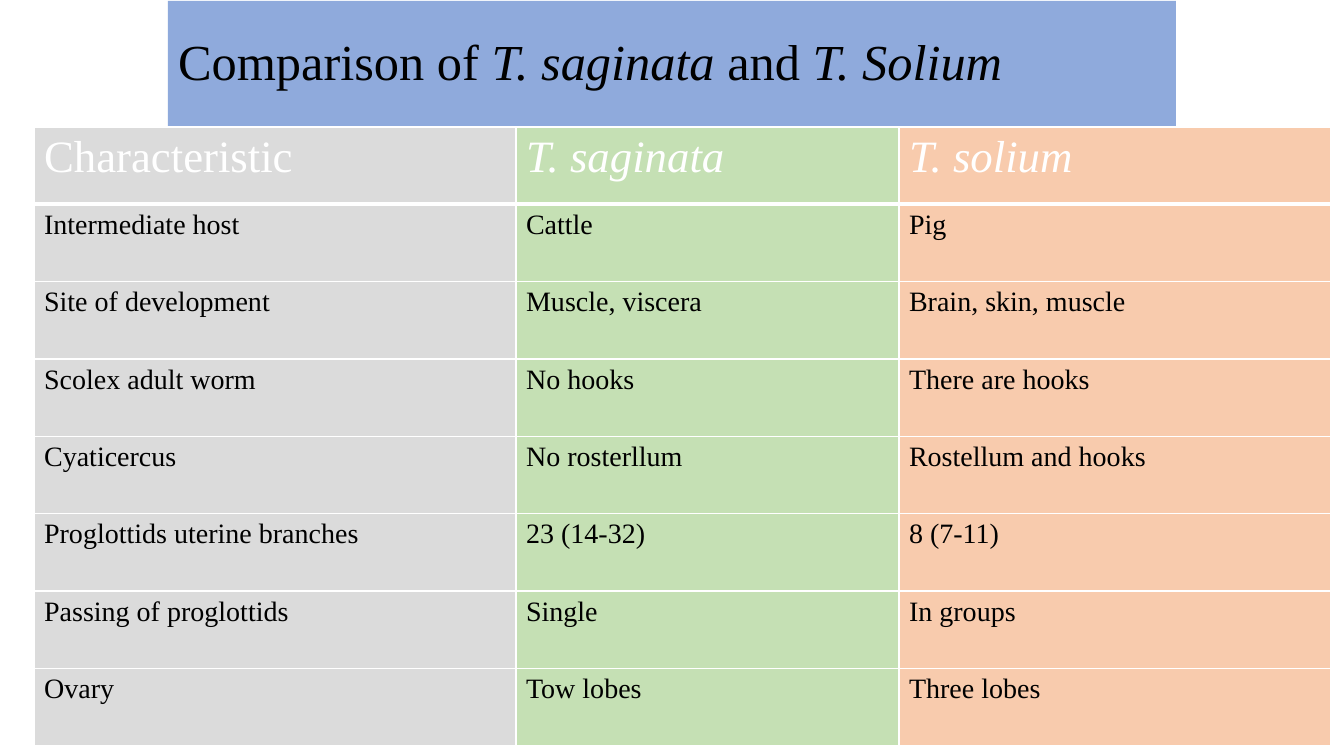
"""Build a slide that compares two tapeworm species in a table."""
import lxml.etree
import pptx
import pptx.dml.color
import pptx.enum.text
import pptx.oxml.ns
import pptx.util

PX = 914400 / 100.8
FONT = "Times New Roman"
COLOURS = {
    "title": "8FAADC",
    "characteristic": "DBDBDB",
    "saginata": "C5E0B4",
    "solium": "F8CBAD",
    "text": "000000",
    "white": "FFFFFF",
}
TITLE_RUNS = [
    ("Comparison of ", False),
    ("T. saginata ", True),
    ("and ", False),
    ("T. Solium", True),
]
COLUMNS = [("characteristic", 482), ("saginata", 383), ("solium", 432)]
ROWS = [
    ("Characteristic", "T. saginata", "T. solium"),
    ("Intermediate host", "Cattle", "Pig"),
    ("Site of development", "Muscle, viscera", "Brain, skin, muscle"),
    ("Scolex adult worm", "No hooks", "There are hooks"),
    ("Cyaticercus", "No rosterllum", "Rostellum and hooks"),
    ("Proglottids uterine branches", "23 (14-32)", "8 (7-11)"),
    ("Passing of proglottids", "Single", "In groups"),
    ("Ovary", "Tow lobes", "Three lobes"),
]
TABLE_HEIGHT = 619
HEADER_BORDERS = {"lnL": 1, "lnR": 1, "lnT": 1, "lnB": 3}


def length(pixels):
    return pptx.util.Emu(round(pixels * PX))


def format_run(run, size, colour, italic):
    run.font.name = FONT
    run.font.size = pptx.util.Pt(size)
    run.font.bold = False
    run.font.italic = italic
    run.font.color.rgb = pptx.dml.color.RGBColor.from_string(COLOURS[colour])


presentation = pptx.Presentation()
presentation.slide_width = length(1344)
presentation.slide_height = length(756)
slide = presentation.slides.add_slide(presentation.slide_layouts[5])

title = slide.shapes.title
title.left, title.top = length(168), length(1)
title.width, title.height = length(1008), length(126)
title.fill.solid()
title.fill.fore_color.rgb = pptx.dml.color.RGBColor.from_string(COLOURS["title"])
title.text_frame.vertical_anchor = pptx.enum.text.MSO_ANCHOR.MIDDLE
paragraph = title.text_frame.paragraphs[0]
paragraph.alignment = pptx.enum.text.PP_ALIGN.LEFT
paragraph.line_spacing = 0.9
for text, italic in TITLE_RUNS:
    run = paragraph.add_run()
    run.text = text
    format_run(run, 36, "text", italic)

table = slide.shapes.add_table(
    len(ROWS), len(COLUMNS), length(34), length(127),
    length(sum(width for name, width in COLUMNS)), length(TABLE_HEIGHT),
).table
for column, (name, width) in zip(table.columns, COLUMNS):
    column.width = length(width)

for row_index, texts in enumerate(ROWS):
    table.rows[row_index].height = length(TABLE_HEIGHT / len(ROWS))
    is_header = row_index == 0
    for column_index, text in enumerate(texts):
        cell = table.cell(row_index, column_index)
        cell.fill.solid()
        fill_colour = COLOURS[COLUMNS[column_index][0]]
        cell.fill.fore_color.rgb = pptx.dml.color.RGBColor.from_string(fill_colour)
        cell.text_frame.text = text
        format_run(
            cell.text_frame.paragraphs[0].runs[0],
            32 if is_header else 20,
            "white" if is_header else "text",
            is_header and column_index > 0,
        )
        if is_header:
            properties = cell._tc.get_or_add_tcPr()
            for position, (side, points) in enumerate(HEADER_BORDERS.items()):
                border = lxml.etree.Element(
                    pptx.oxml.ns.qn(f"a:{side}"), w=str(pptx.util.Pt(points))
                )
                fill = lxml.etree.SubElement(border, pptx.oxml.ns.qn("a:solidFill"))
                lxml.etree.SubElement(
                    fill, pptx.oxml.ns.qn("a:srgbClr"), val=COLOURS["white"]
                )
                properties.insert(position, border)

presentation.save("out.pptx")
